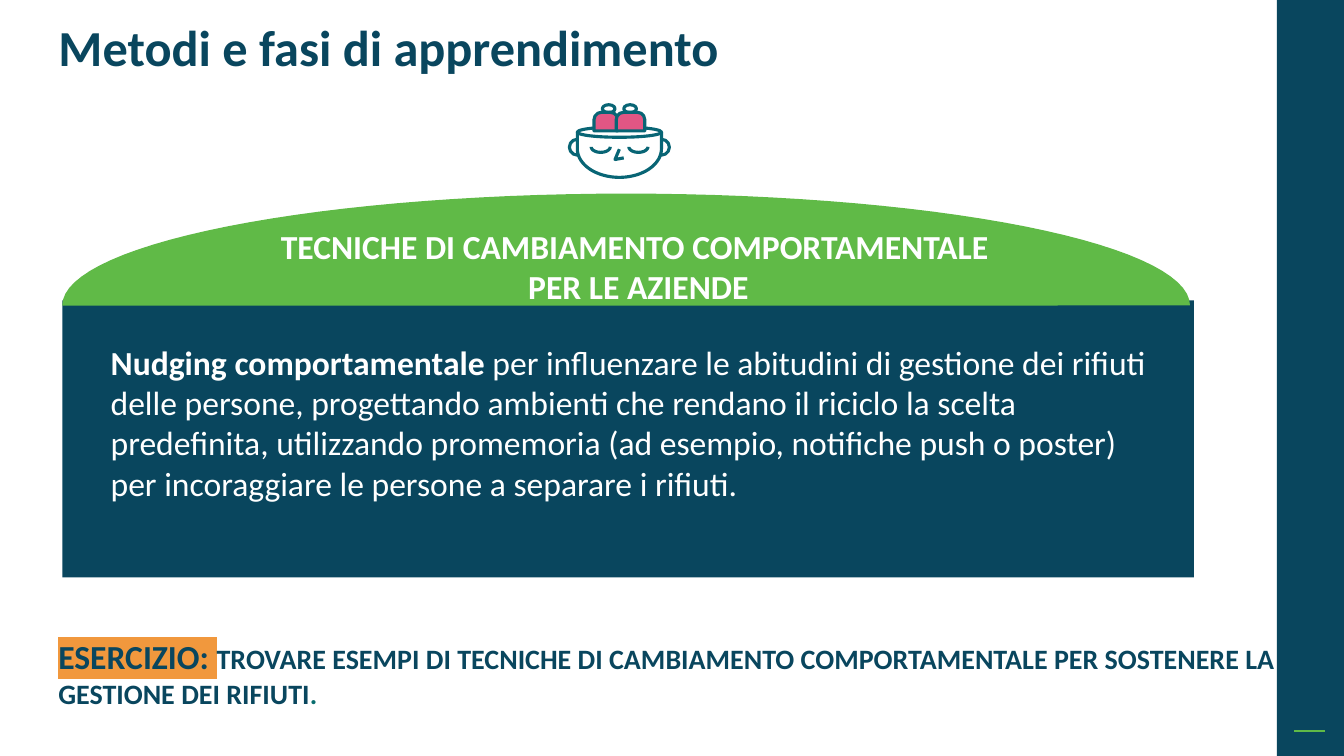
from math import cos, pi, sin

from lxml.etree import SubElement
from pptx import Presentation
from pptx.dml.color import RGBColor
from pptx.enum.shapes import MSO_CONNECTOR, MSO_SHAPE
from pptx.enum.text import MSO_ANCHOR, MSO_AUTO_SIZE, PP_ALIGN
from pptx.oxml.ns import qn
from pptx.util import Cm, Pt

NAVY, GREEN, WHITE = "09465E", "60BA47", "FFFFFF"
TEAL, PINK, ORANGE, PINE = "086575", "E25684", "F1983D", "086D6E"


def rgb(code):
    return RGBColor.from_string(code)


def half_ellipse(x, y, rx, ry, steps=60):
    angles = [pi * step / steps for step in range(steps + 1)]
    return [(x - rx * cos(angle), y + ry * sin(angle)) for angle in angles]


class SlideBuilder:
    """Draws the elements of one slide in a shared style, with lengths in centimetres."""

    font = "Calibri"
    stroke = Pt(2.25)

    def __init__(self, slide):
        self.shapes = slide.shapes

    def paint(self, shape, fill=None, line=None):
        shape.shadow.inherit = False
        if fill:
            shape.fill.solid()
            shape.fill.fore_color.rgb = rgb(fill)
        else:
            shape.fill.background()
        if line:
            shape.line.color.rgb = rgb(line)
            shape.line.width = self.stroke
        else:
            shape.line.fill.background()
        return shape

    def preset(self, kind, x, y, width, height, fill=None, line=None):
        shape = self.shapes.add_shape(kind, Cm(x), Cm(y), Cm(width), Cm(height))
        return self.paint(shape, fill, line)

    def oval(self, x, y, rx, ry, line):
        return self.preset(MSO_SHAPE.OVAL, x - rx, y - ry, 2 * rx, 2 * ry, WHITE, line)

    def outline(self, points, fill=None, line=None, close=True):
        start, *rest = [(Cm(x), Cm(y)) for x, y in points]
        builder = self.shapes.build_freeform(*start)
        builder.add_line_segments(rest, close=close)
        return self.paint(builder.convert_to_shape(), fill, line)

    def rule(self, x1, x2, y, color):
        rule = self.shapes.add_connector(MSO_CONNECTOR.STRAIGHT, Cm(x1), Cm(y), Cm(x2), Cm(y))
        rule.line.color.rgb = rgb(color)
        rule.line.width = Pt(1)
        SubElement(rule.element.spPr, qn("a:effectLst"))

    def set_text(self, shape, paragraphs, align=PP_ALIGN.LEFT):
        frame = shape.text_frame
        frame.word_wrap = True
        frame.auto_size = MSO_AUTO_SIZE.NONE
        frame.vertical_anchor = MSO_ANCHOR.TOP
        for index, runs in enumerate(paragraphs):
            paragraph = frame.add_paragraph() if index else frame.paragraphs[0]
            paragraph.alignment = align
            for run in runs:
                self.add_run(paragraph, *run)
        return frame

    def add_run(self, paragraph, text, size, color, bold=True, highlight=None):
        run = paragraph.add_run()
        run.text = text
        run.font.size = Pt(size)
        run.font.bold = bold
        run.font.color.rgb = rgb(color)
        if highlight:
            mark = SubElement(run.font.element if hasattr(run.font, "element")
                              else run._r.get_or_add_rPr(), qn("a:highlight"))
            SubElement(mark, qn("a:srgbClr"), val=highlight)
        run.font.name = self.font

    def text(self, x, y, width, height, paragraphs, align=PP_ALIGN.LEFT):
        box = self.shapes.add_textbox(Cm(x), Cm(y), Cm(width), Cm(height))
        self.set_text(box, paragraphs, align)

    def title(self, x, y, width, height, text):
        title = self.shapes.title
        title.left, title.top, title.width, title.height = Cm(x), Cm(y), Cm(width), Cm(height)
        frame = self.set_text(title, [[(text, 36, NAVY)]])
        frame.paragraphs[0].line_spacing = 0.9

    def mind_icon(self, x, y):
        for side in (-1, 1):
            self.oval(x + side * 1.06, y + 0.38, 0.2, 0.2, TEAL)
        bowl = half_ellipse(x, y + 0.42, 1.06, 0.72)
        self.outline([(x - 1.06, y), *bowl, (x + 1.06, y)], WHITE, TEAL)
        self.oval(x, y, 1.06, 0.13, TEAL)
        for curl in (-0.27, 0.27):
            self.oval(x + curl, y - 0.59, 0.16, 0.1, TEAL)
        for left, width in ((-0.64, 0.6), (-0.08, 0.72)):
            lobe = self.preset(MSO_SHAPE.ROUND_2_SAME_RECTANGLE,
                               x + left, y - 0.5, width, 0.47, PINK, TEAL)
            lobe.adjustments[0] = 0.4
        for eye in (-0.47, 0.48):
            self.outline(half_ellipse(x + eye, y + 0.37, 0.24, 0.14), line=TEAL, close=False)
        nose = [(x, y + 0.43), (x - 0.11, y + 0.69), (x + 0.11, y + 0.65)]
        self.outline(nose, line=TEAL, close=False)


def main():
    deck = Presentation()
    deck.slide_width, deck.slide_height = Cm(33.87), Cm(19.05)
    page = SlideBuilder(deck.slides.add_slide(deck.slide_layouts[5]))

    page.preset(MSO_SHAPE.RECTANGLE, 32.18, 0, 1.69, 19.05, NAVY)
    page.rule(32.61, 33.4, 18.42, GREEN)
    page.title(1.22, 0.46, 20.7, 1.4, "Metodi e fasi di apprendimento")

    page.preset(MSO_SHAPE.RECTANGLE, 1.57, 7.57, 28.52, 6.98, NAVY)
    page.outline(half_ellipse(15.78, 7.7, 14.21, -2.82), GREEN)
    page.text(5.51, 5.56, 21.16, 2.31, [
        [("TECNICHE DI CAMBIAMENTO COMPORTAMENTALE ", 24, WHITE)],
        [("PER LE AZIENDE", 24, WHITE)],
    ], PP_ALIGN.CENTER)

    nudging = page.preset(MSO_SHAPE.RECTANGLE, 2.54, 8.48, 27.18, 5.05, NAVY)
    page.set_text(nudging, [[
        ("Nudging comportamentale ", 24, WHITE),
        ("per influenzare le abitudini di gestione dei rifiuti delle persone, progettando "
         "ambienti che rendano il riciclo la scelta predefinita, utilizzando promemoria "
         "(ad esempio, notifiche push o poster) per incoraggiare le persone a separare "
         "i rifiuti.", 24, WHITE, False),
    ]])

    page.mind_icon(15.61, 3.33)
    page.text(1.22, 15.9, 31.29, 2.1, [[
        ("ESERCIZIO: ", 24, NAVY, True, ORANGE),
        ("TROVARE ESEMPI DI TECNICHE DI CAMBIAMENTO COMPORTAMENTALE PER SOSTENERE LA "
         "GESTIONE DEI RIFIUTI", 20, NAVY),
        (".", 20, PINE),
    ]])
    deck.save("out.pptx")


if __name__ == "__main__":
    main()
